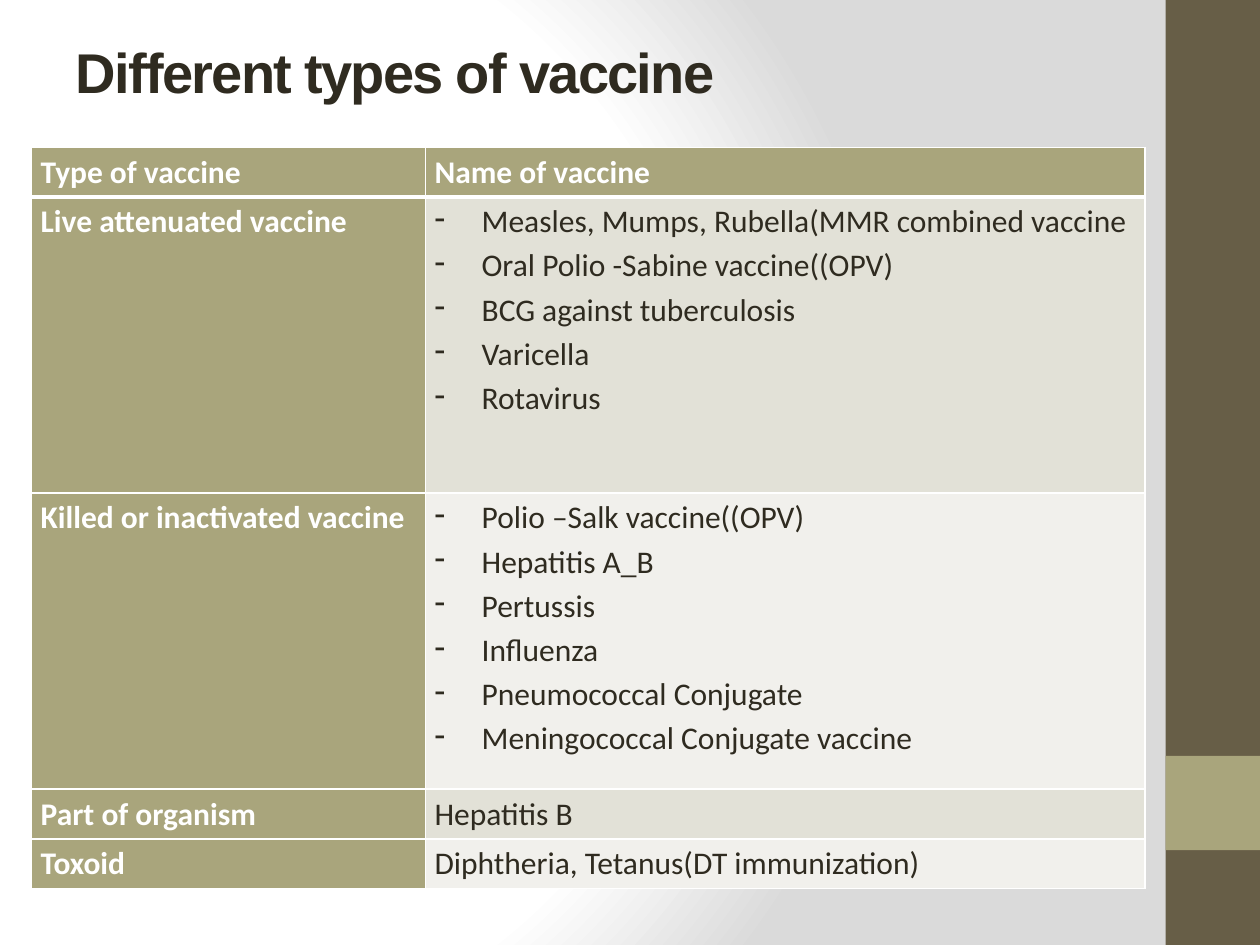
import pptx
import pptx.dml.color
import pptx.enum.shapes
import pptx.enum.text
import pptx.oxml
import pptx.oxml.ns
import pptx.util
from lxml import etree

Cm, Pt = pptx.util.Cm, pptx.util.Pt
qn = pptx.oxml.ns.qn

COLORS = {
    "dark": "2F2B20",
    "white": "FFFFFF",
    "brown": "675E47",
    "olive": "A9A57C",
    "band_dark": "E2E1D7",
    "band_light": "F1F0EC",
    "bg_end": "DADADA",
}
TITLE = "Different types of vaccine"
ROWS = [
    ("Type of vaccine", "Name of vaccine"),
    ("Live attenuated vaccine", [
        "Measles, Mumps, Rubella(MMR combined vaccine",
        "Oral Polio -Sabine vaccine((OPV)",
        "BCG against tuberculosis",
        "Varicella",
        "Rotavirus",
    ]),
    ("Killed or inactivated vaccine", [
        "Polio –Salk vaccine((OPV)",
        "Hepatitis A_B",
        "Pertussis",
        "Influenza",
        "Pneumococcal Conjugate",
        "Meningococcal Conjugate vaccine",
    ]),
    ("Part of organism", "Hepatitis B"),
    ("Toxoid", "Diphtheria, Tetanus(DT immunization)"),
]
COL_WIDTHS = [7.94, 14.5]
ROW_HEIGHTS = [1, 5.97, 5.97, 1, 1]
SIDE_BARS = [(0, 19.05, "brown"), (15.24, 1.9, "olive")]
BG_STOPS = [(0, "white"), (75, "white"), (100, "bg_end")]
BG_FOCUS = {"l": 20, "t": 50, "r": 100, "b": 50}
TITLE_FORMAT = {"name": "Arial", "size": Pt(32), "bold": True}
HEAD_FORMAT = {"name": "Calibri", "size": Pt(18), "bold": True}
BODY_FORMAT = {**HEAD_FORMAT, "bold": False}
CELL_FORMAT = {"margin_left": Cm(0.18), "margin_right": Cm(0.18),
               "margin_top": 0, "margin_bottom": 0}
TITLE_FRAME = {"margin_top": 0, "margin_bottom": 0, "word_wrap": True,
               "vertical_anchor": pptx.enum.text.MSO_ANCHOR.TOP}


def rgb(name):
    return pptx.dml.color.RGBColor.from_string(COLORS[name])


def apply(target, values):
    for key, value in values.items():
        setattr(target, key, value)


def add_xml(parent, tag, **attrs):
    return etree.SubElement(parent, qn(tag), {k: str(v) for k, v in attrs.items()})


def add_run(p, text, font, color):
    r = p.add_run()
    r.text = text
    apply(r.font, font)
    r.font.color.rgb = rgb(color)
    return r


def set_background(s):
    s.background.fill.gradient()
    grad = s.background._cSld.bg.bgPr.find(qn("a:gradFill"))
    for child in list(grad):
        grad.remove(child)
    stops = add_xml(grad, "a:gsLst")
    for pos, color in BG_STOPS:
        add_xml(add_xml(stops, "a:gs", pos=pos * 1000), "a:srgbClr", val=COLORS[color])
    focus = {side: share * 1000 for side, share in BG_FOCUS.items()}
    add_xml(add_xml(grad, "a:path", path="circle"), "a:fillToRect", **focus)


def add_side_bars(s):
    for top, height, color in SIDE_BARS:
        sp = s.shapes.add_shape(pptx.enum.shapes.MSO_SHAPE.RECTANGLE,
                                Cm(23.5), Cm(top), Cm(1.9), Cm(height))
        sp.shadow.inherit = False
        sp.fill.solid()
        sp.fill.fore_color.rgb = rgb(color)
        sp.line.fill.background()


def add_title(s):
    sp = s.shapes.title
    apply(sp, {"left": Cm(1.27), "top": Cm(0.76), "width": Cm(21.16), "height": Cm(2.41)})
    tf = sp.text_frame
    apply(tf, TITLE_FRAME)
    p = tf.paragraphs[0]
    p.alignment = pptx.enum.text.PP_ALIGN.LEFT
    r = add_run(p, TITLE, TITLE_FORMAT, "dark")
    r.font._element.set("spc", "-100")


def set_borders(cell, row):
    tcPr = cell._tc.get_or_add_tcPr()
    thick = {(0, "B"), (1, "T")}
    for side in "LRTB":
        width = 3 if (row, side) in thick else 1
        ln = add_xml(tcPr, f"a:ln{side}", w=Pt(width))
        add_xml(add_xml(ln, "a:solidFill"), "a:srgbClr", val=COLORS["white"])


def fill_cell(cell, content, row, col):
    is_head = row == 0 or col == 0
    is_list = isinstance(content, list)
    fill = "olive" if is_head else "band_dark" if row % 2 else "band_light"
    apply(cell, CELL_FORMAT)
    set_borders(cell, row)
    cell.fill.solid()
    cell.fill.fore_color.rgb = rgb(fill)
    tf = cell.text_frame
    for i, text in enumerate(content if is_list else [content]):
        p = tf.add_paragraph() if i else tf.paragraphs[0]
        p.line_spacing = 1.15
        if is_list:
            pPr = p._p.get_or_add_pPr()
            pPr.set("marL", str(Cm(0.95)))
            pPr.set("indent", str(-Cm(0.95)))
            add_xml(pPr, "a:buChar", char="-")
        add_run(p, text, HEAD_FORMAT if is_head else BODY_FORMAT,
                "white" if is_head else "dark")


def add_vaccine_table(s):
    table = s.shapes.add_table(len(ROWS), len(COL_WIDTHS), Cm(0.64), Cm(2.97),
                               Cm(sum(COL_WIDTHS)), Cm(sum(ROW_HEIGHTS))).table
    for column, width in zip(table.columns, COL_WIDTHS):
        column.width = Cm(width)
    for row, height in zip(table.rows, ROW_HEIGHTS):
        row.height = Cm(height)
    for i, contents in enumerate(ROWS):
        for j, content in enumerate(contents):
            fill_cell(table.cell(i, j), content, i, j)


def main():
    prs = pptx.Presentation()
    apply(prs, {"slide_width": Cm(25.4), "slide_height": Cm(19.05)})
    s = prs.slides.add_slide(prs.slide_layouts[5])
    set_background(s)
    add_side_bars(s)
    add_title(s)
    add_vaccine_table(s)
    prs.save("out.pptx")


if __name__ == "__main__":
    main()
